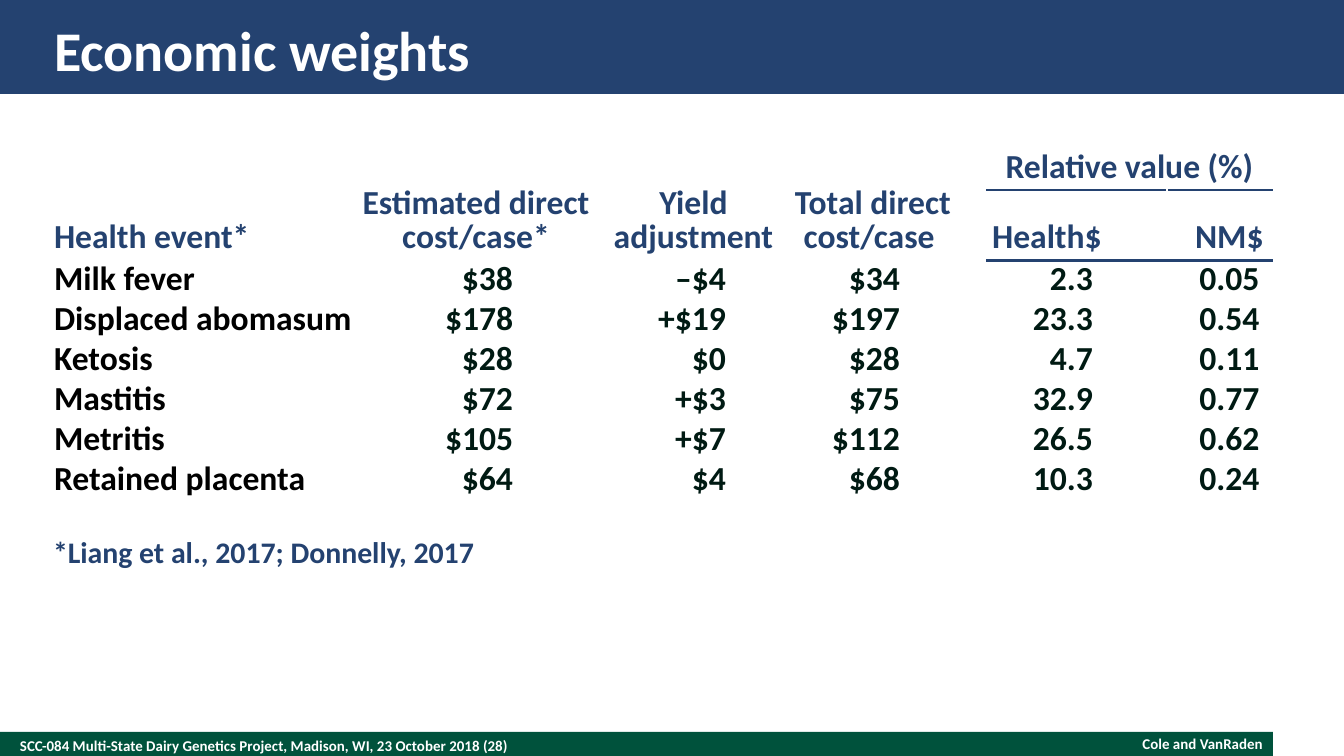
from dataclasses import dataclass

from lxml import etree
from pptx import Presentation
from pptx.dml.color import RGBColor
from pptx.enum.shapes import MSO_SHAPE
from pptx.enum.text import MSO_ANCHOR, PP_ALIGN
from pptx.oxml.ns import qn
from pptx.util import Emu, Pt

LEFT, CENTER, RIGHT = PP_ALIGN.LEFT, PP_ALIGN.CENTER, PP_ALIGN.RIGHT
TOP, MIDDLE, BOTTOM = MSO_ANCHOR.TOP, MSO_ANCHOR.MIDDLE, MSO_ANCHOR.BOTTOM
RECTANGLE = MSO_SHAPE.RECTANGLE
EMU_PER_PX = 914400 / 134.4


@dataclass(frozen=True)
class Theme:
    font: str = "Calibri"
    navy: str = "244270"
    green: str = "00523C"
    white: str = "FFFFFF"
    black: str = "000000"
    figure: str = "001A13"
    title_size: int = 30
    table_size: int = 18
    note_size: int = 16
    footer_size: int = 8
    header_spacing: int = 18
    body_spacing: int = 21
    rule_width: float = 1.5


def px(length):
    return Emu(round(length * EMU_PER_PX))


def apply(target, values):
    for name, value in values.items():
        setattr(target, name, value)


class SlideBuilder:
    """Draw themed elements on the current slide."""

    def __init__(self, slide, theme):
        self.slide = slide
        self.theme = theme

    def fill_paragraph(self, paragraph, text, size, color, align=LEFT, spacing=None):
        paragraph.alignment = align
        if spacing:
            paragraph.line_spacing = Pt(spacing)
        run = paragraph.add_run()
        run.text = text
        apply(run.font, {"name": self.theme.font, "size": Pt(size), "bold": True})
        run.font.color.rgb = RGBColor.from_string(color)

    def bar(self, left, top, width, height, color):
        shape = self.slide.shapes.add_shape(RECTANGLE, *map(px, (left, top, width, height)))
        shape.shadow.inherit = False
        shape.fill.solid()
        shape.fill.fore_color.rgb = RGBColor.from_string(color)
        shape.line.fill.background()

    def text(self, box, text, size, color, align=LEFT, anchor=MIDDLE):
        frame = self.slide.shapes.add_textbox(*map(px, box)).text_frame
        apply(frame, {"word_wrap": True, "vertical_anchor": anchor, "margin_left": 0,
                      "margin_top": 0, "margin_right": 0, "margin_bottom": 0})
        self.fill_paragraph(frame.paragraphs[0], text, size, color, align)

    def table(self, left, top, widths, heights):
        box = map(px, (left, top, sum(widths), sum(heights)))
        table = self.slide.shapes.add_table(len(heights), len(widths), *box).table
        apply(table, {"first_row": False, "horz_banding": False})
        for column, width in zip(table.columns, widths):
            column.width = px(width)
        for row, height in zip(table.rows, heights):
            row.height = px(height)
        for cell in table.iter_cells():
            cell.fill.background()
            apply(cell, {"margin_left": 0, "margin_top": 0,
                         "margin_right": 0, "margin_bottom": 0})
        return table

    def cell(self, cell, text, color, align, spacing, anchor=TOP, left=0, right=0, bottom=0):
        apply(cell, {"vertical_anchor": anchor, "margin_left": px(left),
                     "margin_right": px(right), "margin_bottom": px(bottom)})
        self.fill_paragraph(cell.text_frame.paragraphs[0], text, self.theme.table_size,
                            color, align, spacing)

    def border(self, cell, side):
        line = etree.Element(qn("a:" + side), w=str(Pt(self.theme.rule_width)))
        fill = etree.SubElement(line, qn("a:solidFill"))
        etree.SubElement(fill, qn("a:srgbClr"), val=self.theme.navy)
        cell._tc.get_or_add_tcPr().insert(0, line)


HEADERS = [
    (0, "Health event*", LEFT, 0, 0),
    (0, "Estimated direct cost/case*", CENTER, 0, 0),
    (0, "Yield adjustment", CENTER, 0, 0),
    (0, "Total direct cost/case ", CENTER, 0, 34),
    (1, "Health$", CENTER, 0, 60),
    (1, "NM$", CENTER, 20, 0),
]
BODY_FORMATS = [(LEFT, 0, 0), (RIGHT, 0, 81), (RIGHT, 0, 67),
                (RIGHT, 0, 87), (RIGHT, 0, 74), (CENTER, 20, 0)]
EVENTS = [
    ("Milk fever", "$38", "–$4", "$34", "2.3", "0.05"),
    ("Displaced abomasum", "$178", "+$19", "$197", "23.3", "0.54"),
    ("Ketosis", "$28", "$0", "$28", "4.7", "0.11"),
    ("Mastitis", "$72", "+$3", "$75", "32.9", "0.77"),
    ("Metritis", "$105", "+$7", "$112", "26.5", "0.62"),
    ("Retained placenta", "$64", "$4", "$68", "10.3", "0.24"),
]


def add_weights_table(builder):
    theme = builder.theme
    table = builder.table(54, 148, [304, 236, 199, 194, 180, 105], [42, 42] + [40] * len(EVENTS))
    for column in range(4):
        table.cell(0, column).merge(table.cell(1, column))
    table.cell(0, 4).merge(table.cell(0, 5))
    for column, (row, text, align, left, right) in enumerate(HEADERS):
        builder.cell(table.cell(row, column), text, theme.navy, align,
                     theme.header_spacing, BOTTOM, left, right, 3)
    builder.cell(table.cell(0, 4), "Relative value (%)", theme.navy, CENTER,
                 theme.body_spacing, bottom=3)
    for column in (4, 5):
        builder.border(table.cell(0, column), "lnB")
        builder.border(table.cell(1, column), "lnT")
    for row, event in enumerate(EVENTS, 2):
        for column, (text, (align, left, right)) in enumerate(zip(event, BODY_FORMATS)):
            color = theme.figure if column else theme.black
            builder.cell(table.cell(row, column), text, color, align,
                         theme.body_spacing, left=left, right=right)


def main():
    presentation = Presentation()
    apply(presentation, {"slide_width": px(1344), "slide_height": px(756)})
    theme = Theme()
    slide = presentation.slides.add_slide(presentation.slide_layouts[6])
    builder = SlideBuilder(slide, theme)
    builder.bar(0, 732, 1273, 27, theme.green)
    builder.bar(0, 0, 1344, 94, theme.navy)
    builder.text((20, 732, 874, 27),
                 "SCC-084 Multi-State Dairy Genetics Project, Madison, WI, 23 October 2018 (28)",
                 theme.footer_size, theme.white)
    builder.text((968, 735, 295, 18), "Cole and VanRaden", theme.footer_size, theme.white, RIGHT)
    builder.text((54, 14, 1236, 70), "Economic weights", theme.title_size, theme.white)
    add_weights_table(builder)
    builder.text((53, 534, 657, 36), "*Liang et al., 2017; Donnelly, 2017",
                 theme.note_size, theme.navy, anchor=TOP)
    presentation.save("out.pptx")


if __name__ == "__main__":
    main()
